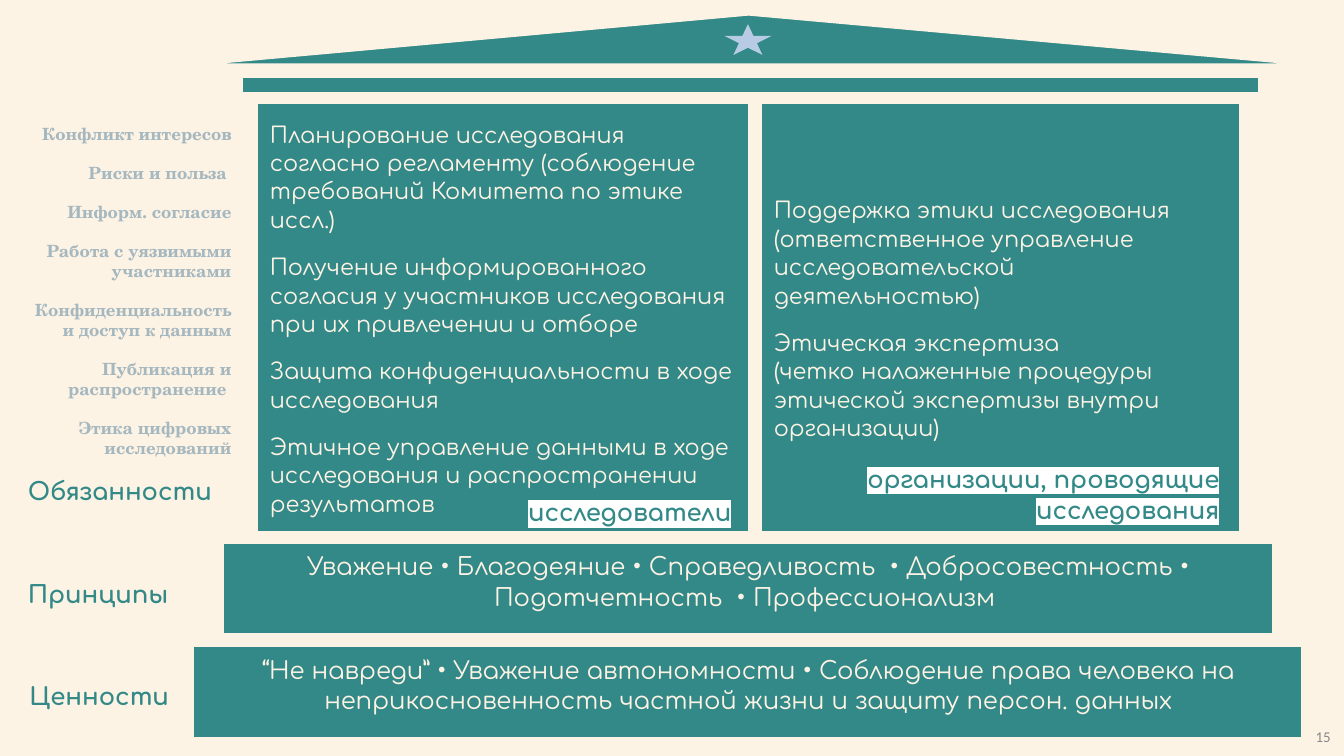
from lxml import etree
from pptx import Presentation
from pptx.dml.color import RGBColor
from pptx.enum.shapes import MSO_SHAPE
from pptx.enum.text import MSO_ANCHOR, PP_ALIGN
from pptx.oxml.ns import qn
from pptx.util import Inches, Pt

RECT, STAR = MSO_SHAPE.RECTANGLE, MSO_SHAPE.STAR_5_POINT
TOP, MIDDLE = MSO_ANCHOR.TOP, MSO_ANCHOR.MIDDLE
LEFT, CENTER, RIGHT = PP_ALIGN.LEFT, PP_ALIGN.CENTER, PP_ALIGN.RIGHT

COLORS = {
    "cream": "FDF3E5",
    "teal": "338987",
    "topic": "A6B8BF",
    "star": "B7CCE4",
    "number": "888888",
    "white": "FFFFFF",
}


def rgb(name):
    return RGBColor.from_string(COLORS[name])


def write_text(frame, paragraphs, size=13, font="Comfortaa", color="cream",
               bold=False, align=LEFT, anchor=TOP, spacing=1.06, gap=10,
               inset=0.1, highlight=None):
    """Fill a text frame; gap is the space between paragraphs in points."""
    frame.word_wrap = True
    frame.vertical_anchor = anchor
    frame.margin_left = frame.margin_right = Inches(0.1)
    frame.margin_top = frame.margin_bottom = Inches(inset)
    for index, text in enumerate(paragraphs):
        paragraph = frame.add_paragraph() if index else frame.paragraphs[0]
        paragraph.text = text
        paragraph.alignment = align
        paragraph.line_spacing = spacing
        if index:
            paragraph.space_before = Pt(gap)
        for run in paragraph.runs:
            run.font.size = Pt(size)
            run.font.name = font
            run.font.bold = bold
            run.font.color.rgb = rgb(color)
            if highlight:
                mark = etree.Element(qn("a:highlight"))
                etree.SubElement(mark, qn("a:srgbClr"), val=COLORS[highlight])
                run.font._element.find(qn("a:solidFill")).addnext(mark)
        # Line breaks take the size of the text around them
        for line_break in paragraph._p.findall(qn("a:br")):
            etree.SubElement(line_break, qn("a:rPr"), sz=str(size * 100))


class TempleSlide:
    def __init__(self, slide):
        self.shapes = slide.shapes
        slide.background.fill.solid()
        slide.background.fill.fore_color.rgb = rgb("cream")

    def paint(self, shape, fill="teal", outline="cream"):
        shape.shadow.inherit = False
        shape.fill.solid()
        shape.fill.fore_color.rgb = rgb(fill)
        if outline:
            shape.line.color.rgb = rgb(outline)
            shape.line.width = Pt(1)
        else:
            shape.line.fill.background()

    def block(self, box, paragraphs=(), kind=RECT, fill="teal",
              outline="cream", **style):
        shape = self.shapes.add_shape(kind, *map(Inches, box))
        self.paint(shape, fill, outline)
        if paragraphs:
            write_text(shape.text_frame, paragraphs, inset=0.05, **style)

    def outline(self, points):
        start, *others = [tuple(map(Inches, point)) for point in points]
        builder = self.shapes.build_freeform(*start)
        builder.add_line_segments(others, close=True)
        self.paint(builder.convert_to_shape())

    def label(self, box, paragraphs, **style):
        frame = self.shapes.add_textbox(*map(Inches, box)).text_frame
        write_text(frame, paragraphs, **style)


def main():
    prs = Presentation()
    # Widescreen, 16 to 9
    prs.slide_width, prs.slide_height = Inches(10), Inches(10 * 9 / 16)
    temple = TempleSlide(prs.slides.add_slide(prs.slide_layouts[6]))

    # Columns: duties of organisations and of researchers
    organisation_duties = [
        "Поддержка этики исследования (ответственное управление "
        "исследовательской деятельностью)",
        "Этическая экспертиза \n(четко налаженные процедуры этической "
        "экспертизы внутри организации)",
    ]
    researcher_duties = [
        "Планирование исследования согласно регламенту (соблюдение "
        "требований Комитета по этике иссл.)",
        "Получение информированного согласия у участников исследования "
        "при их привлечении и отборе",
        "Защита конфиденциальности в ходе исследования",
        "Этичное управление данными в ходе исследования и распространении "
        "результатов",
    ]
    for left, width, duties in ((5.66, 3.57, organisation_duties),
                                (1.91, 3.66, researcher_duties)):
        temple.block((left, 0.77, width, 3.19), duties, size=12, anchor=MIDDLE)

    # Topics beside the columns
    topics = [
        "Конфликт интересов",
        "Риски и польза ",
        "Информ. согласие",
        "Работа с уязвимыми участниками",
        "Конфиденциальность и доступ к данным",
        "Публикация и распространение ",
        "Этика цифровых исследований",
    ]
    temple.label((0.11, 0.82, 1.71, 2.66), topics, size=9, bold=True,
                 font="TeX Gyre Schola", color="topic", align=RIGHT, spacing=1)

    # Steps: principles and values
    principles = ("Уважение • Благодеяние • Справедливость  • "
                  "Добросовестность • Подотчетность  • Профессионализм ")
    values = ("“Не навреди” • Уважение автономности • Соблюдение права "
              "человека на неприкосновенность частной жизни и защиту "
              "персон. данных")
    temple.block((1.66, 4.04, 7.81, 0.68), [principles], align=CENTER)
    temple.block((1.44, 4.81, 8.25, 0.68), [values], align=CENTER)

    # Beam, roof and star
    temple.block((1.8, 0.57, 7.57, 0.12))
    temple.outline([(1.5, 0.48), (5.57, 0.11), (9.69, 0.48)])
    temple.block((5.39, 0.18, 0.35, 0.23), kind=STAR, fill="star", outline=None)

    # Slide number
    temple.label((7.67, 5.33, 2.33, 0.3), ["15"], size=8, font="Calibri",
                 color="number", align=RIGHT, anchor=MIDDLE, spacing=1,
                 inset=0.05)

    # Names of the levels
    for left, top, width, level in ((0.12, 4.96, 1.34, "Ценности"),
                                    (0.11, 4.2, 1.34, "Принципы"),
                                    (0.11, 3.43, 1.65, "Обязанности")):
        temple.label((left, top, width, 0.37), [level], color="teal", bold=True)

    # Who carries each column
    for box, bearer in (((3.46, 3.59, 2.08, 0.37), "исследователи"),
                        ((6.21, 3.34, 2.96, 0.54),
                         "организации, проводящие исследования")):
        temple.label(box, [bearer], color="teal", bold=True, align=RIGHT,
                     highlight="white")

    prs.save("out.pptx")


if __name__ == "__main__":
    main()
